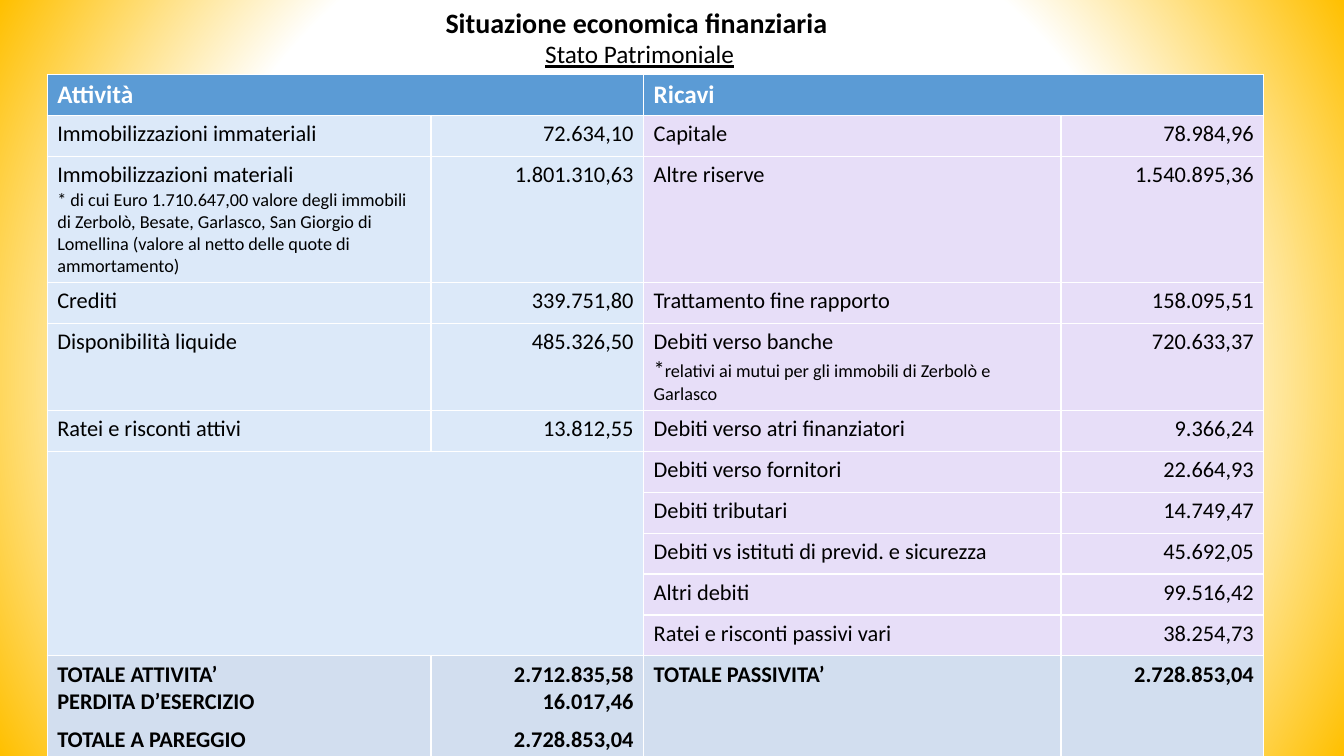
"""Build the balance sheet slide with its two-sided table."""
from pptx import Presentation
from pptx.dml.color import RGBColor
from pptx.enum.text import MSO_ANCHOR as Anchor, PP_ALIGN as Align
from pptx.oxml import parse_xml
from pptx.oxml.ns import nsdecls
from pptx.util import Cm, Pt

HEADING = "Situazione economica finanziaria "
SUBHEADING = "Stato Patrimoniale"
SIDES = ("Attività", "Ricavi")
ASSETS = [
    ("Immobilizzazioni immateriali", "72.634,10"),
    ("Immobilizzazioni materiali", "1.801.310,63"),
    ("Crediti", "339.751,80"),
    ("Disponibilità liquide", "485.326,50"),
    ("Ratei e risconti attivi", "13.812,55"),
]
LIABILITIES = [
    ("Capitale", "78.984,96"),
    ("Altre riserve", "1.540.895,36"),
    ("Trattamento fine rapporto", "158.095,51"),
    ("Debiti verso banche", "720.633,37"),
    ("Debiti verso atri finanziatori", "9.366,24"),
    ("Debiti verso fornitori", "22.664,93"),
    ("Debiti tributari", "14.749,47"),
    ("Debiti vs istituti di previd. e sicurezza", "45.692,05"),
    ("Altri debiti", "99.516,42"),
    ("Ratei e risconti passivi vari", "38.254,73"),
]
NOTES = {
    "Immobilizzazioni materiali": [
        ("* di cui Euro 1.710.647,00 valore degli immobili di Zerbolò, Besate, Garlasco, "
         "San Giorgio di Lomellina (valore al netto delle quote di ammortamento)", 13)],
    "Debiti verso banche": [
        ("*", 16), ("relativi ai mutui per gli immobili di Zerbolò e Garlasco", 13)],
}
ASSET_TOTALS = [
    ("TOTALE ATTIVITA’", "2.712.835,58"),
    ("PERDITA D’ESERCIZIO", "16.017,46"),
    ("TOTALE A PAREGGIO", "2.728.853,04"),
]
LIABILITY_TOTALS = [("TOTALE PASSIVITA’", "2.728.853,04")]

BLACK = RGBColor(0x00, 0x00, 0x00)
WHITE = RGBColor(0xFF, 0xFF, 0xFF)
HEADER_BLUE = RGBColor(0x5B, 0x9B, 0xD5)
ASSET_BLUE = RGBColor(0xDC, 0xE9, 0xF9)
LIABILITY_LILAC = RGBColor(0xE7, 0xDE, 0xF8)
TOTAL_BLUE = RGBColor(0xD2, 0xDE, 0xEF)
FILLS = (ASSET_BLUE, LIABILITY_LILAC)

COLUMN_WIDTHS = (9.67, 5.36, 10.52, 5.11)
ROW_HEIGHT = 1.03
TALL_ROWS = {2: 3.14, 4: 2.16, 11: 2.53}
TOTAL_ROW = len(LIABILITIES) + 1

GLOW = f"""<a:gradFill {nsdecls('a')} rotWithShape="1"><a:gsLst>
<a:gs pos="0"><a:srgbClr val="FFFFFF"/></a:gs>
<a:gs pos="65000"><a:srgbClr val="FFFFFF"/></a:gs>
<a:gs pos="100000"><a:srgbClr val="FFC000"><a:alpha val="68000"/></a:srgbClr></a:gs>
</a:gsLst><a:path path="circle"><a:fillToRect l="50000" t="50000" r="50000" b="50000"/></a:path>
</a:gradFill>"""


def write(paragraph, text, size=16, color=BLACK, bold=False, underline=False,
          align=Align.LEFT, before=0):
    """Add a formatted run to a paragraph."""
    paragraph.alignment = align
    if before:
        paragraph.space_before = Pt(before)
    run = paragraph.add_run()
    run.text = text
    run.font.name = "Calibri"
    run.font.size = Pt(size)
    run.font.color.rgb = color
    run.font.bold = bold
    run.font.underline = underline


def paint(cell, color):
    """Fill a table cell."""
    cell.fill.solid()
    cell.fill.fore_color.rgb = color


def add_background(slide):
    """Fill the slide with a glow from the centre."""
    slide.background.fill.gradient()
    linear = slide.element.xpath(".//p:bgPr/a:gradFill")[0]
    linear.getparent().replace(linear, parse_xml(GLOW))


def add_heading(slide):
    """Place the two-line title."""
    title = slide.shapes.title
    title.left, title.top, title.width, title.height = Cm(2.44), Cm(0), Cm(27.36), Cm(1.88)
    frame = title.text_frame
    frame.word_wrap = True
    frame.vertical_anchor = Anchor.TOP
    write(frame.paragraphs[0], HEADING, size=20, bold=True, align=Align.CENTER)
    write(frame.add_paragraph(), SUBHEADING, size=18, underline=True, align=Align.CENTER)


def add_balance(slide):
    """Place the balance sheet table."""
    heights = [TALL_ROWS.get(row, ROW_HEIGHT) for row in range(TOTAL_ROW + 1)]
    balance = slide.shapes.add_table(
        len(heights), len(COLUMN_WIDTHS), Cm(1.19), Cm(1.88),
        Cm(sum(COLUMN_WIDTHS)), Cm(sum(heights))).table
    balance.horz_banding = False
    for column, width in zip(balance.columns, COLUMN_WIDTHS):
        column.width = Cm(width)
    for row, height in zip(balance.rows, heights):
        row.height = Cm(height)

    for row in range(TOTAL_ROW + 1):
        for column in range(len(COLUMN_WIDTHS)):
            color = {0: HEADER_BLUE, TOTAL_ROW: TOTAL_BLUE}.get(row, FILLS[column // 2])
            paint(balance.cell(row, column), color)

    for side, heading in enumerate(SIDES):
        header = balance.cell(0, 2 * side)
        header.merge(balance.cell(0, 2 * side + 1))
        write(header.text_frame.paragraphs[0], heading, size=18, color=WHITE, bold=True)
    balance.cell(len(ASSETS) + 1, 0).merge(balance.cell(TOTAL_ROW - 1, 1))

    for side, entries in enumerate((ASSETS, LIABILITIES)):
        for row, (label, amount) in enumerate(entries, 1):
            label_frame = balance.cell(row, 2 * side).text_frame
            write(label_frame.paragraphs[0], label)
            if label in NOTES:
                note = label_frame.add_paragraph()
                for text, size in NOTES[label]:
                    write(note, text, size=size)
            amount_frame = balance.cell(row, 2 * side + 1).text_frame
            write(amount_frame.paragraphs[0], amount, align=Align.RIGHT)

    for side, totals in enumerate((ASSET_TOTALS, LIABILITY_TOTALS)):
        for part, align in enumerate((Align.LEFT, Align.RIGHT)):
            frame = balance.cell(TOTAL_ROW, 2 * side + part).text_frame
            for line, total in enumerate(totals):
                paragraph = frame.add_paragraph() if line else frame.paragraphs[0]
                write(paragraph, total[part], bold=True, align=align,
                      before=7.3 if line == 2 else 0)


def main():
    """Build and save the slide."""
    deck = Presentation()
    deck.slide_width, deck.slide_height = Cm(33.87), Cm(19.05)
    slide = deck.slides.add_slide(deck.slide_layouts[5])
    add_background(slide)
    add_heading(slide)
    add_balance(slide)
    deck.save("out.pptx")


if __name__ == "__main__":
    main()
